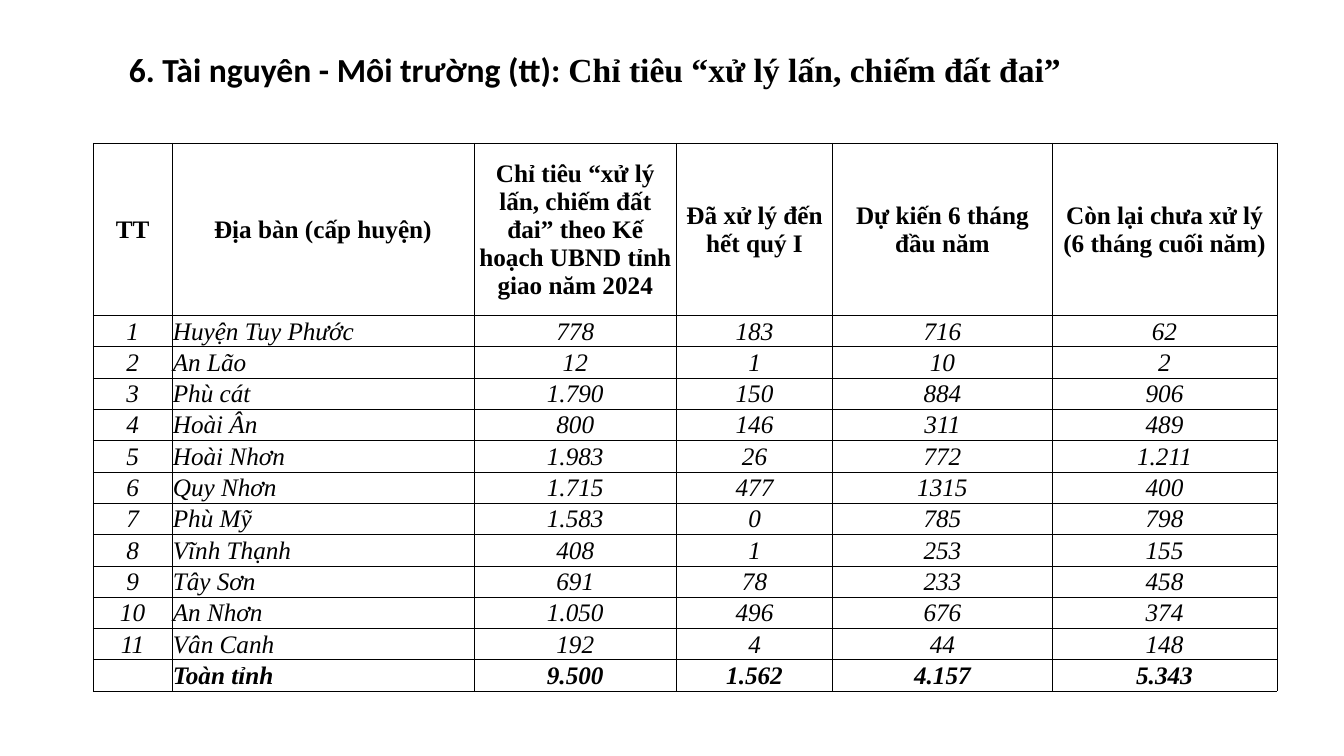
from dataclasses import dataclass

from lxml import etree
from pptx import Presentation
from pptx.dml.color import RGBColor
from pptx.enum.text import MSO_ANCHOR, MSO_AUTO_SIZE, PP_ALIGN
from pptx.oxml.ns import qn
from pptx.util import Inches, Pt

LEFT, CENTER = PP_ALIGN.LEFT, PP_ALIGN.CENTER
MIDDLE = MSO_ANCHOR.MIDDLE
GROW = MSO_AUTO_SIZE.SHAPE_TO_FIT_TEXT
WIDE, HIGH = Inches(13.33), Inches(7.5)


@dataclass(frozen=True)
class Theme:
    ink: str = "000000"
    paper: str = "FFFFFF"
    sans: str = "Calibri"
    serif: str = "Times New Roman"
    title: int = 24
    body: int = 18
    line: float = 0.5
    pad: float = 0.01


THEME = Theme()

TITLE = [
    ("6. Tài nguyên - Môi trường (tt): ", THEME.sans),
    ("Chỉ tiêu “xử lý lấn, chiếm đất đai”", THEME.serif),
]
HEAD = [
    "TT",
    "Địa bàn (cấp huyện)",
    "Chỉ tiêu “xử lý lấn, chiếm đất đai” theo Kế hoạch UBND tỉnh giao năm 2024",
    "Đã xử lý đến hết quý I",
    "Dự kiến 6 tháng đầu năm",
    "Còn lại chưa xử lý (6 tháng cuối năm)",
]
AREAS = [
    ("Huyện Tuy Phước", "778", "183", "716", "62"),
    ("An Lão", "12", "1", "10", "2"),
    ("Phù cát", "1.790", "150", "884", "906"),
    ("Hoài Ân", "800", "146", "311", "489"),
    ("Hoài Nhơn", "1.983", "26", "772", "1.211"),
    ("Quy Nhơn", "1.715", "477", "1315", "400"),
    ("Phù Mỹ", "1.583", "0", "785", "798"),
    ("Vĩnh Thạnh", "408", "1", "253", "155"),
    ("Tây Sơn", "691", "78", "233", "458"),
    ("An Nhơn", "1.050", "496", "676", "374"),
    ("Vân Canh", "192", "4", "44", "148"),
]
TOTAL = ("", "Toàn tỉnh", "9.500", "1.562", "4.157", "5.343")

# Relative widths of columns and heights of rows
COLS = [0.78, 3, 2.01, 1.55, 2.18, 2.23]
ROWS = [5.5] + [1] * (len(AREAS) + 1)


def share(x, y, w, h):
    """Turn percentages of the slide into a box."""
    return tuple(round(part * size / 100) for part, size in
                 zip((x, y, w, h), (WIDE, HIGH, WIDE, HIGH)))


def add_run(para, text, face, size, bold=False, slant=False):
    run = para.add_run()
    run.text = text
    font = run.font
    font.name, font.size = face, Pt(size)
    font.bold, font.italic = bold, slant
    font.color.rgb = RGBColor.from_string(THEME.ink)


def add_title(slide, box):
    frame = slide.shapes.add_textbox(*box).text_frame
    frame.word_wrap = True
    frame.auto_size = GROW
    for text, face in TITLE:
        add_run(frame.paragraphs[0], text, face, THEME.title, bold=True)


def set_edges(cell):
    props = cell._tc.get_or_add_tcPr()
    for spot, side in enumerate(("lnL", "lnR", "lnT", "lnB")):
        edge = etree.Element(qn("a:" + side), w=str(Pt(THEME.line)))
        fill = etree.SubElement(edge, qn("a:solidFill"))
        etree.SubElement(fill, qn("a:srgbClr"), val=THEME.ink)
        props.insert(spot, edge)


def fill_cell(cell, text, align, bold, slant):
    cell.fill.solid()
    cell.fill.fore_color.rgb = RGBColor.from_string(THEME.paper)
    set_edges(cell)
    cell.vertical_anchor = MIDDLE
    cell.margin_left = cell.margin_right = cell.margin_top = Inches(THEME.pad)
    cell.margin_bottom = 0
    para = cell.text_frame.paragraphs[0]
    para.alignment = align
    if text:
        add_run(para, text, THEME.serif, THEME.body, bold, slant)


def add_grid(slide, box):
    wide, high = box[2:]
    table = slide.shapes.add_table(len(ROWS), len(COLS), *box).table
    table.first_row = table.horz_banding = False
    for col, part in zip(table.columns, COLS):
        col.width = round(wide * part / sum(COLS))
    for row, part in zip(table.rows, ROWS):
        row.height = round(high * part / sum(ROWS))

    # Header, numbered areas, then the total
    body = [(str(num), *area) for num, area in enumerate(AREAS, 1)]
    lines = [HEAD, *body, TOTAL]
    last = len(lines) - 1
    for r, line in enumerate(lines):
        for c, text in enumerate(line):
            align = LEFT if r and c == 1 else CENTER
            fill_cell(table.cell(r, c), text, align, r in (0, last), r > 0)


def main():
    deck = Presentation()
    deck.slide_width, deck.slide_height = WIDE, HIGH
    slide = deck.slides.add_slide(deck.slide_layouts[6])
    add_title(slide, share(8.85, 5.87, 82.75, 6.67))
    add_grid(slide, share(6.94, 18.93, 88.07, 72.5))
    deck.save("out.pptx")


if __name__ == "__main__":
    main()
